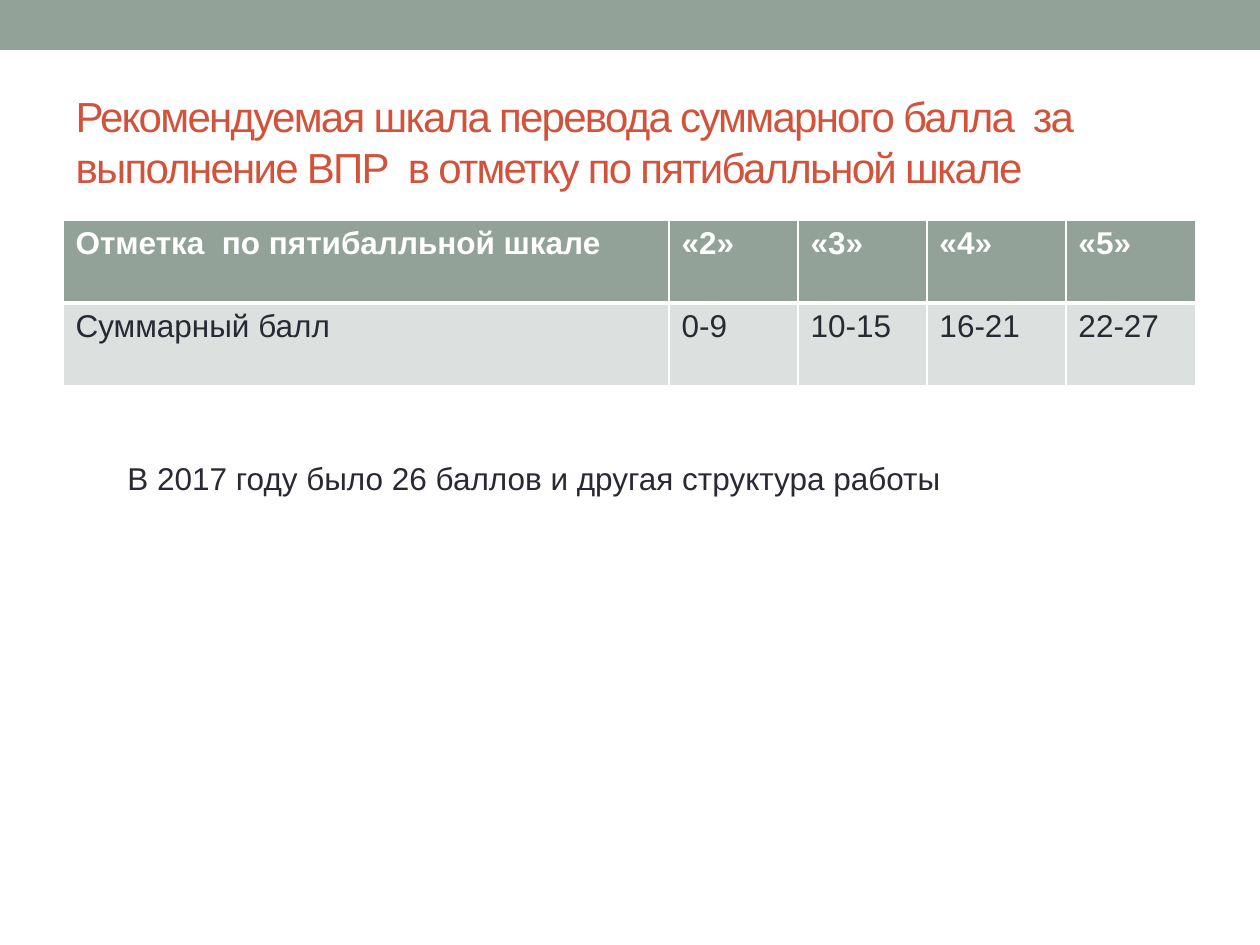
from dataclasses import dataclass

from lxml import etree
from pptx import Presentation
from pptx.dml.color import RGBColor
from pptx.enum.shapes import MSO_SHAPE
from pptx.enum.text import MSO_ANCHOR, MSO_AUTO_SIZE, PP_ALIGN
from pptx.oxml.ns import qn
from pptx.slide import Slide
from pptx.table import _Cell
from pptx.text.text import _Paragraph
from pptx.util import Pt

RECTANGLE = MSO_SHAPE.RECTANGLE
MIDDLE = MSO_ANCHOR.MIDDLE
LEFT = PP_ALIGN.LEFT
NO_AUTOFIT = MSO_AUTO_SIZE.NONE
FIT_SHAPE = MSO_AUTO_SIZE.SHAPE_TO_FIT_TEXT

EMU_PER_PX = 914400 // 126
FONT = "Arial"
COLORS = {
    "sage": "93A299",
    "pale": "DCE0DE",
    "title": "D2533C",
    "text": "292934",
    "white": "FFFFFF",
}


@dataclass(frozen=True)
class Box:
    left: int
    top: int
    width: int
    height: int

    def emu(self) -> tuple[int, ...]:
        return tuple(px(value) for value in (self.left, self.top, self.width, self.height))


@dataclass(frozen=True)
class RowStyle:
    fill: str
    color: str
    bold: bool
    borders: dict[str, int]


COLUMN_WIDTHS = (606, 129, 129, 139, 130)
ROW_HEIGHT = 83
SCALE_ROWS = (
    (
        RowStyle("sage", "white", True, {"lnL": 1, "lnR": 1, "lnT": 1, "lnB": 3}),
        ("Отметка  по пятибалльной шкале", "«2»", "«3»", "«4»", "«5»"),
    ),
    (
        RowStyle("pale", "text", False, {"lnL": 1, "lnR": 1, "lnT": 3, "lnB": 1}),
        ("Суммарный балл", "0-9", "10-15", "16-21", "22-27"),
    ),
)


def px(value: int) -> int:
    return value * EMU_PER_PX


def rgb(name: str) -> RGBColor:
    return RGBColor.from_string(COLORS[name])


def style_text(paragraph: _Paragraph, size: int, color: str, bold: bool = False) -> None:
    paragraph.alignment = LEFT
    font = paragraph.font
    font.name = FONT
    font.size = Pt(size)
    font.bold = bold
    font.color.rgb = rgb(color)


def add_top_band(slide: Slide) -> None:
    band = slide.shapes.add_shape(RECTANGLE, *Box(0, 0, 1260, 50).emu())
    band.shadow.inherit = False
    band.fill.solid()
    band.fill.fore_color.rgb = rgb("sage")
    band.line.fill.background()


def format_title(slide: Slide, text: str) -> None:
    title = slide.shapes.title
    title.left, title.top, title.width, title.height = Box(63, 73, 1134, 136).emu()
    frame = title.text_frame
    frame.text = text
    frame.word_wrap = True
    frame.auto_size = NO_AUTOFIT
    frame.vertical_anchor = MIDDLE
    paragraph = frame.paragraphs[0]
    style_text(paragraph, 24, "title")
    # Letter spacing of -1 pt, in hundredths of a point
    paragraph.runs[0]._r.get_or_add_rPr().set("spc", "-100")


def set_borders(cell: _Cell, borders: dict[str, int]) -> None:
    properties = cell._tc.get_or_add_tcPr()
    for index, (side, points) in enumerate(borders.items()):
        line = etree.Element(qn(f"a:{side}"), w=str(Pt(points)))
        fill = etree.SubElement(line, qn("a:solidFill"))
        etree.SubElement(fill, qn("a:srgbClr"), val=COLORS["white"])
        properties.insert(index, line)


def add_scale_table(slide: Slide) -> None:
    box = Box(63, 220, sum(COLUMN_WIDTHS), ROW_HEIGHT * len(SCALE_ROWS))
    frame = slide.shapes.add_table(len(SCALE_ROWS), len(COLUMN_WIDTHS), *box.emu())
    table = frame.table
    for column, width in zip(table.columns, COLUMN_WIDTHS):
        column.width = px(width)
    for row, (style, texts) in zip(table.rows, SCALE_ROWS):
        row.height = px(ROW_HEIGHT)
        for cell, text in zip(row.cells, texts):
            cell.text = text
            style_text(cell.text_frame.paragraphs[0], 18, style.color, style.bold)
            cell.fill.solid()
            cell.fill.fore_color.rgb = rgb(style.fill)
            set_borders(cell, style.borders)


def add_note(slide: Slide, text: str) -> None:
    note = slide.shapes.add_textbox(*Box(115, 453, 855, 50).emu())
    frame = note.text_frame
    frame.text = text
    frame.word_wrap = False
    frame.auto_size = FIT_SHAPE
    style_text(frame.paragraphs[0], 18, "text")


def main() -> None:
    presentation = Presentation()
    presentation.slide_width = px(1260)
    presentation.slide_height = px(945)
    slide = presentation.slides.add_slide(presentation.slide_layouts[5])
    add_top_band(slide)
    format_title(
        slide,
        "Рекомендуемая шкала перевода суммарного балла  за "
        "выполнение ВПР  в отметку по пятибалльной шкале",
    )
    add_scale_table(slide)
    add_note(slide, "В 2017 году было 26 баллов и другая структура работы")
    presentation.save("out.pptx")


if __name__ == "__main__":
    main()
